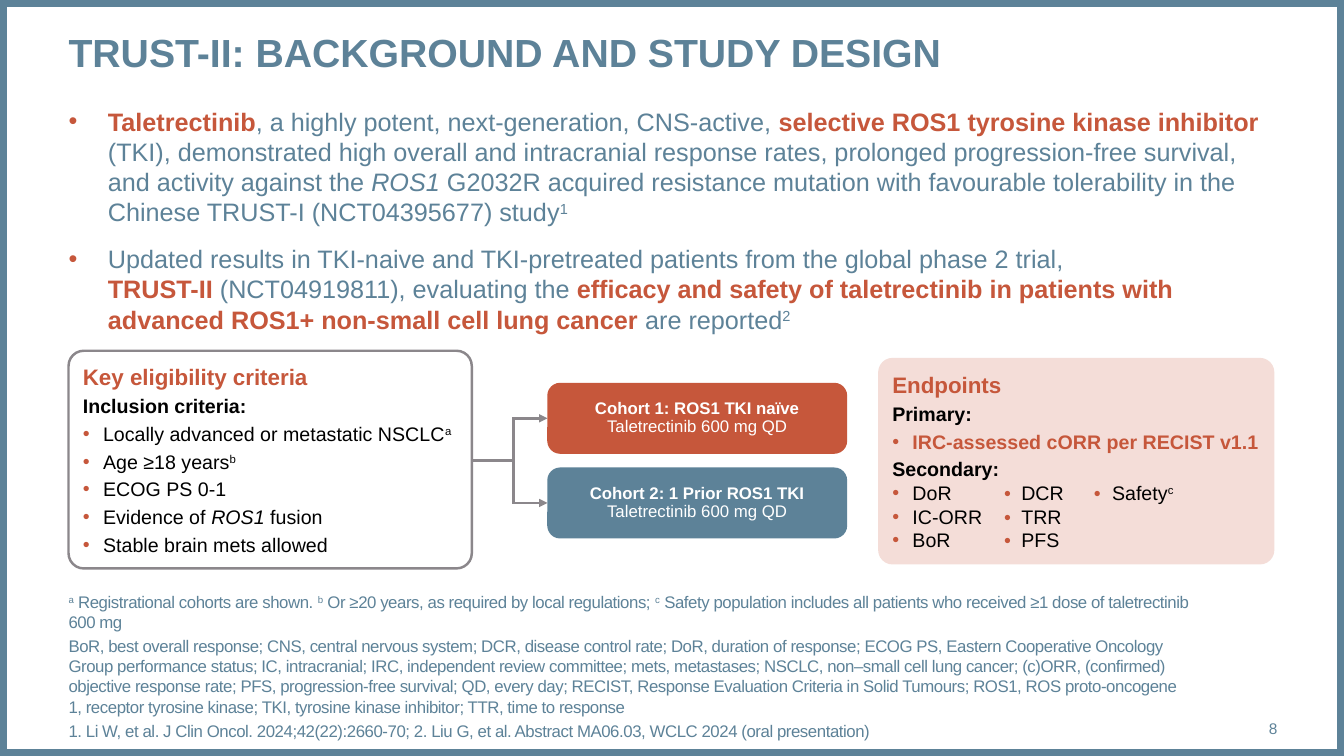
from dataclasses import dataclass
from lxml import etree
from pptx import Presentation
from pptx.dml.color import RGBColor
from pptx.enum.shapes import MSO_CONNECTOR, MSO_SHAPE
from pptx.enum.text import MSO_ANCHOR, PP_ALIGN
from pptx.oxml.ns import qn
from pptx.util import Inches, Pt

RECT, ROUND = MSO_SHAPE.RECTANGLE, MSO_SHAPE.ROUNDED_RECTANGLE
TOP, MID, LOW = MSO_ANCHOR.TOP, MSO_ANCHOR.MIDDLE, MSO_ANCHOR.BOTTOM
LEFT, CENTER, RIGHT = PP_ALIGN.LEFT, PP_ALIGN.CENTER, PP_ALIGN.RIGHT
STRAIGHT = MSO_CONNECTOR.STRAIGHT


@dataclass(frozen=True)
class Theme:
    font: str = "Arial"
    blue: str = "5D8298"
    red: str = "C6573B"
    pink: str = "F4DDD8"
    gray: str = "8B878B"
    white: str = "FFFFFF"
    black: str = "000000"
    title: int = 28
    body: int = 18
    head: int = 16
    list: int = 14
    note: int = 12
    page: int = 11


T = Theme()


@dataclass(frozen=True)
class Par:
    """Runs are (text, marks): b bold, i italic, r red, ^ raised."""
    runs: list[tuple[str, str]]
    size: int
    color: str
    before: float = 0
    after: float = 0
    indent: float = 0
    tabs: tuple[float, ...] = ()
    align: PP_ALIGN = LEFT
    line: float = 1.0
    track: int = 0


@dataclass(frozen=True)
class Box:
    left: float
    top: float
    width: float
    height: float
    pars: list[Par]
    anchor: MSO_ANCHOR = TOP
    fill: str = ""
    edge: str = ""
    weight: float = 1.75
    radius: float = 0


def rgb(code: str) -> RGBColor:
    return RGBColor.from_string(code)


def put(item, values: dict) -> None:
    for key, value in values.items():
        setattr(item, key, value)


def mark(para, par: Par) -> None:
    """Add the bullet and tab stops of a list paragraph."""
    props = para._p.get_or_add_pPr()
    inset = Inches(par.indent)
    props.set("marL", str(inset))
    props.set("indent", str(-inset))
    tint = etree.SubElement(props, qn("a:buClr"))
    etree.SubElement(tint, qn("a:srgbClr"), val=T.red)
    etree.SubElement(props, qn("a:buFont"), typeface=T.font)
    etree.SubElement(props, qn("a:buChar"), char="•")
    if par.tabs:
        stops = etree.SubElement(props, qn("a:tabLst"))
        for stop in par.tabs:
            etree.SubElement(stops, qn("a:tab"), pos=str(Inches(stop)), algn="l")


def write(frame, pars: list[Par]) -> None:
    for at, par in enumerate(pars):
        para = frame.add_paragraph() if at else frame.paragraphs[0]
        put(para, {"alignment": par.align, "line_spacing": par.line,
                   "space_before": Pt(par.before if at else 0),
                   "space_after": Pt(par.after)})
        if par.indent:
            mark(para, par)
        for text, marks in par.runs:
            if text == "\n":
                para.add_line_break()
                continue
            run = para.add_run()
            run.text = text
            put(run.font, {"name": T.font, "size": Pt(par.size),
                           "bold": "b" in marks, "italic": "i" in marks})
            run.font.color.rgb = rgb(T.red if "r" in marks else par.color)
            props = run._r.get_or_add_rPr()
            if "^" in marks:
                props.set("baseline", "30000")
            if par.track:
                props.set("spc", str(par.track))


def draw(slide, box: Box) -> None:
    place = [Inches(n) for n in (box.left, box.top, box.width, box.height)]
    if box.fill or box.edge:
        shape = slide.shapes.add_shape(ROUND if box.radius else RECT, *place)
        shape.shadow.inherit = False
        if box.radius:
            shape.adjustments[0] = box.radius
        if box.fill:
            shape.fill.solid()
            shape.fill.fore_color.rgb = rgb(box.fill)
        else:
            shape.fill.background()
        if box.edge:
            shape.line.color.rgb = rgb(box.edge)
            shape.line.width = Pt(box.weight)
        else:
            shape.line.fill.background()
    else:
        shape = slide.shapes.add_textbox(*place)
        put(shape.text_frame, dict.fromkeys(
            ("margin_left", "margin_right", "margin_top", "margin_bottom"), 0))
    put(shape.text_frame, {"word_wrap": True, "vertical_anchor": box.anchor})
    write(shape.text_frame, box.pars)


def link(slide, x1: float, y1: float, x2: float, y2: float, arrow: bool = False) -> None:
    wire = slide.shapes.add_connector(STRAIGHT, *(Inches(n) for n in (x1, y1, x2, y2)))
    wire.line.color.rgb = rgb(T.gray)
    wire.line.width = Pt(2)
    if arrow:
        etree.SubElement(wire.line._get_or_add_ln(), qn("a:tailEnd"), type="triangle")
    etree.SubElement(wire._element.spPr, qn("a:effectLst"))


def point(*runs: tuple[str, str]) -> Par:
    return Par(list(runs), T.body, T.blue, before=12, indent=0.39)


def head(text: str) -> Par:
    return Par([(text, "br")], T.head, T.black, after=3)


def label(text: str, before: float = 0, after: float = 0) -> Par:
    return Par([(text, "b")], T.list, T.black, before, after)


def item(*runs: tuple[str, str], after: float = 0, tabs: tuple[float, ...] = ()) -> Par:
    return Par(list(runs), T.list, T.black, after=after, indent=0.2, tabs=tabs)


def note(*runs: tuple[str, str]) -> Par:
    return Par(list(runs), T.note, T.blue, before=3, track=-30)


TITLE = [Par([("TRUST-II: BACKGROUND AND STUDY DESIGN", "b")], T.title, T.blue)]
BODY = [
    point(("Taletrectinib", "br"), (", a highly potent, next-generation, CNS-active, ", ""),
          ("selective ROS1 tyrosine kinase inhibitor", "br"),
          (" (TKI), demonstrated high overall and intracranial response rates, prolonged progression-free survival, and activity against the ", ""),
          ("ROS1 ", "i"),
          ("G2032R acquired resistance mutation with favourable tolerability in the Chinese TRUST-I (NCT04395677) study", ""),
          ("1", "^")),
    point(("Updated results in TKI-naive and TKI-pretreated patients from the global phase 2 trial, ", ""),
          ("\n", ""), ("TRUST-II", "br"), (" (NCT04919811), evaluating the ", ""),
          ("efficacy and safety of taletrectinib in patients with advanced ROS1+ non-small cell lung cancer ", "br"),
          ("are reported", ""), ("2", "^")),
]
NOTES = [
    note(("a", "^"), (" Registrational cohorts are shown. ", ""), ("b", "^"),
         (" Or ≥20 years, as required by local regulations; ", ""), ("c", "^"),
         (" Safety population includes all patients who received ≥1 dose of taletrectinib 600 mg", "")),
    note(("BoR, best overall response; CNS, central nervous system; DCR, disease control rate; DoR, duration of response; ECOG PS, Eastern Cooperative Oncology Group performance status; IC, intracranial; IRC, independent review committee; mets, metastases; NSCLC, non–small cell lung cancer; (c)ORR, (confirmed) objective response rate; PFS, progression-free survival; QD, every day; RECIST, Response Evaluation Criteria in Solid Tumours; ROS1, ROS proto-oncogene 1, receptor tyrosine kinase; TKI, tyrosine kinase inhibitor; TTR, time to response", "")),
    note(("1. Li W, et al. J Clin Oncol. 2024;42(22):2660-70; 2. Liu G, et al. Abstract MA06.03, WCLC 2024 (oral presentation)", "")),
]
STOPS = (1.11, 1.28, 2.0, 2.18)
GOALS = [
    head("Endpoints"), label("Primary:", after=3),
    item(("IRC-assessed cORR per RECIST v1.1", "br")), label("Secondary:", before=3),
    item(("DoR\t", ""), ("•", "r"), ("\tDCR\t", ""), ("•", "r"), ("\tSafety", ""), ("c", "^"), tabs=STOPS),
    *(item((one + "\t", ""), ("•", "r"), ("\t" + two, ""), tabs=STOPS)
      for one, two in (("IC-ORR", "TRR"), ("BoR", "PFS"))),
]
RULES = [
    head("Key eligibility criteria"), label("Inclusion criteria:", after=3),
    *(item(*runs, after=3) for runs in (
        [("Locally advanced or metastatic NSCLC", ""), ("a", "^")],
        [("Age ≥18 years", ""), ("b", "^")],
        [("ECOG PS 0-1", "")],
        [("Evidence of ", ""), ("ROS1", "i"), (" fusion", "")],
        [("Stable brain mets allowed", "")])),
]
ARMS = [("Cohort 1: ROS1 TKI naïve", T.red), ("Cohort 2: 1 Prior ROS1 TKI", T.blue)]


def main() -> None:
    deck = Presentation()
    put(deck, {"slide_width": Inches(13.33), "slide_height": Inches(7.5)})
    slide = deck.slides.add_slide(deck.slide_layouts[6])

    # Frame, text and endpoints
    for box in (
        Box(0, 0, 13.33, 7.5, [], edge=T.blue, weight=10),
        Box(0.68, 1.05, 11.99, 2.47, BODY),
        Box(0.68, 0.28, 11.99, 0.94, TITLE),
        Box(0.68, 6.95, 11.13, 0.4, NOTES, LOW),
        Box(11.81, 7.03, 0.86, 0.4, [Par([("8", "")], T.page, T.blue, align=RIGHT)], MID),
        Box(8.71, 3.55, 3.93, 2.05, GOALS, MID, fill=T.pink, radius=0.07),
    ):
        draw(slide, box)

    # Cohorts and their arrows
    for row, (name, color) in enumerate(ARMS):
        top = 3.81 + 0.84 * row
        link(slide, 5.08, top + 0.34, 5.43, top + 0.34, arrow=True)
        text = Par([(name, "b"), ("\n", ""), ("Taletrectinib 600 mg QD", "")],
                   T.note, T.white, align=CENTER, line=0.9)
        draw(slide, Box(5.44, top, 2.95, 0.68, [text], MID, color, color, radius=0.17))

    # Branch and eligibility criteria
    link(slide, 5.09, 4.98, 5.09, 4.15)
    link(slide, 4.31, 4.57, 5.1, 4.57)
    draw(slide, Box(0.68, 3.48, 4, 2.16, RULES, MID, T.white, T.gray, radius=0.07))
    deck.save("out.pptx")


if __name__ == "__main__":
    main()
